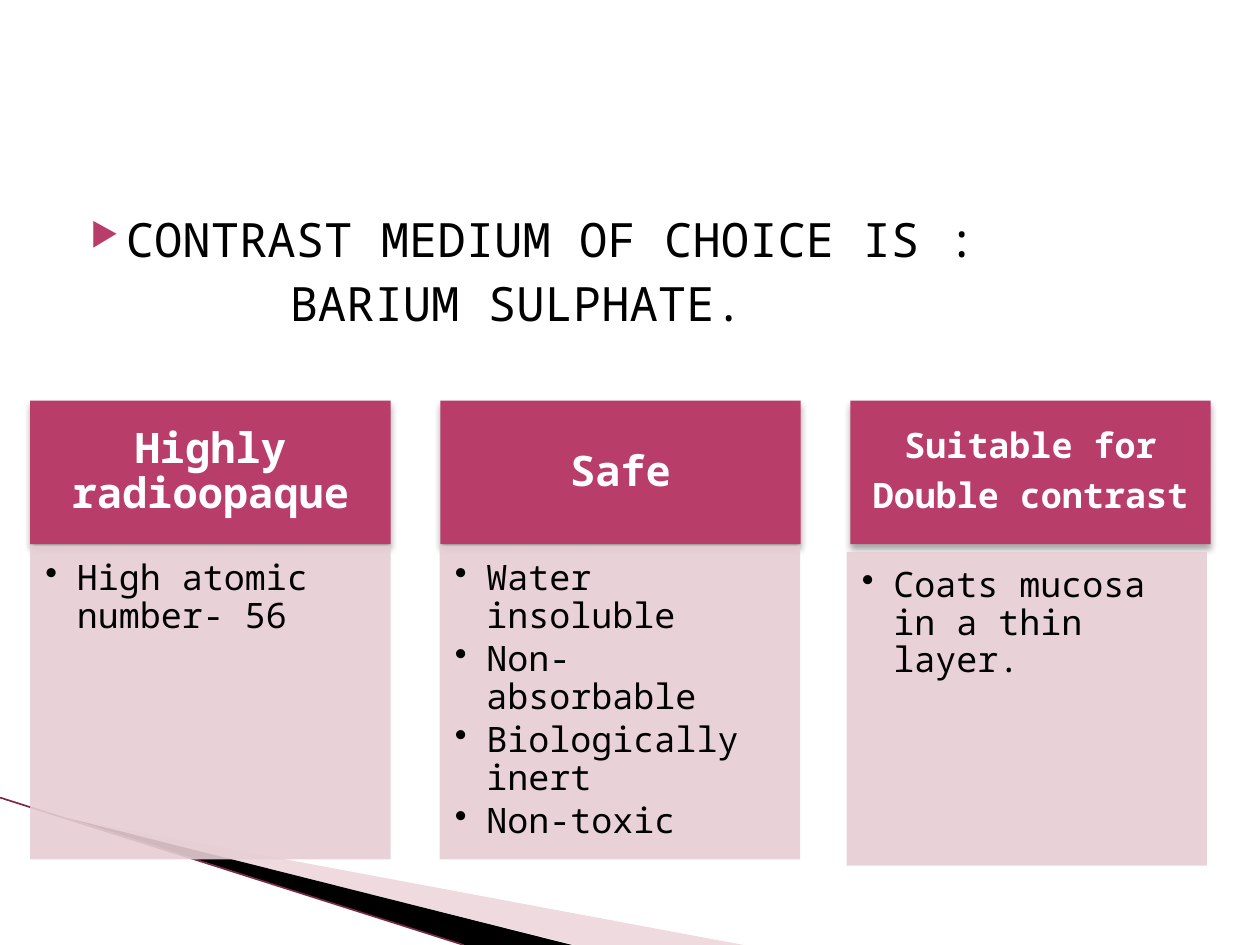
from dataclasses import dataclass

from lxml import etree
from pptx import Presentation
from pptx.dml.color import RGBColor
from pptx.enum.shapes import MSO_CONNECTOR, MSO_SHAPE
from pptx.enum.text import MSO_ANCHOR, PP_ALIGN
from pptx.oxml.ns import qn
from pptx.util import Inches, Pt

RECT = MSO_SHAPE.RECTANGLE
STRAIGHT = MSO_CONNECTOR.STRAIGHT
TOP, MIDDLE = MSO_ANCHOR.TOP, MSO_ANCHOR.MIDDLE
LEFT, CENTER = PP_ALIGN.LEFT, PP_ALIGN.CENTER


@dataclass(frozen=True)
class Theme:
    font: str = "Noto Sans Mono"
    accent: str = "B83D68"
    panel: str = "E6CED4"
    swoosh: str = "D8A3AF"
    edge: str = "7B2945"
    dark: str = "000000"
    light: str = "FFFFFF"
    lead: int = 27
    heading: int = 24
    body: int = 20


THEME = Theme()

COLUMNS = [
    {"heading": ["Highly radioopaque"], "size": THEME.heading, "inset": (0.19, 0.11),
     "points": ["High atomic number- 56"], "panel_at": (0.24, 4.33)},
    {"heading": ["Safe"], "size": THEME.heading, "inset": (0.19, 0.11),
     "points": ["Water insoluble", "Non-absorbable", "Biologically inert", "Non-toxic"],
     "panel_at": (3.49, 4.33)},
    {"heading": ["Suitable for", "Double contrast"], "size": THEME.body, "inset": (0.16, 0.09),
     "points": ["Coats mucosa in a thin layer."], "panel_at": (6.72, 4.38)},
]
HEADING_LEFT, HEADING_TOP, COLUMN_STEP = 0.24, 3.18, 3.255
COLUMN_WIDTH, HEADING_HEIGHT, PANEL_HEIGHT = 2.86, 1.14, 2.49


def sub(parent, tag, **attrs):
    el = etree.SubElement(parent, qn(tag))
    for name, value in attrs.items():
        el.set(name, str(value))
    return el


def set_fill(sp, color, alpha=100):
    sp.shadow.inherit = False
    sp.line.fill.background()
    sp.fill.solid()
    sp.fill.fore_color.rgb = RGBColor.from_string(color)
    if alpha < 100:
        clr = sp._element.spPr.find(qn("a:solidFill"))[0]
        sub(clr, "a:alpha", val=alpha * 1000)


def add_shadow(sp):
    effects = sp._element.spPr.find(qn("a:effectLst"))
    shadow = sub(effects, "a:outerShdw", blurRad=Pt(4), dist=Pt(3), dir=5400000, rotWithShape=0)
    clr = sub(shadow, "a:srgbClr", val=THEME.dark)
    sub(clr, "a:alpha", val=35000)


def set_frame(tf, insets, anchor=TOP):
    left, top, right, bottom = (Inches(v) for v in insets)
    formats = {"word_wrap": True, "vertical_anchor": anchor, "margin_left": left,
               "margin_top": top, "margin_right": right, "margin_bottom": bottom}
    for name, value in formats.items():
        setattr(tf, name, value)


def set_indent(p, margin, indent=0.0):
    pPr = p._p.get_or_add_pPr()
    pPr.set("marL", str(Inches(margin)))
    pPr.set("indent", str(Inches(indent)))
    return pPr


def add_bullet(p, char, margin, color=None, percent=None):
    pPr = set_indent(p, margin, -margin if color is None else -0.28)
    if color:
        sub(sub(pPr, "a:buClr"), "a:srgbClr", val=color)
    if percent:
        sub(pPr, "a:buSzPct", val=percent * 1000)
    sub(pPr, "a:buChar", char=char)


def add_paragraphs(tf, lines, size, color, bold=False, align=LEFT, gap=0, spacing=1.0):
    for i, text in enumerate(lines):
        p = tf.add_paragraph() if i else tf.paragraphs[0]
        p.alignment = align
        p.line_spacing = spacing
        p.space_before = Pt(gap if i else 0)
        r = p.add_run()
        r.text = text
        r.font.color.rgb = RGBColor.from_string(color)
        for name, value in {"name": THEME.font, "size": Pt(size), "bold": bold}.items():
            setattr(r.font, name, value)
    return tf.paragraphs


def add_polygon(s, points, color, alpha=100):
    corners = [(Inches(x), Inches(y)) for x, y in points]
    builder = s.shapes.build_freeform(*corners[0])
    builder.add_line_segments(corners[1:], close=True)
    set_fill(builder.convert_to_shape(), color, alpha)


def add_edge(s, x1, y1, x2, y2):
    line = s.shapes.add_connector(STRAIGHT, Inches(x1), Inches(y1), Inches(x2), Inches(y2))
    line.line.color.rgb = RGBColor.from_string(THEME.edge)
    line.line.width = Pt(0.95)
    sub(line._element.spPr, "a:effectLst")


def add_lead(s):
    sp = s.shapes.add_textbox(Inches(0.5), Inches(1.62), Inches(9), Inches(1.2))
    set_frame(sp.text_frame, (0.1, 0.05, 0.1, 0.05))
    lines = ["CONTRAST MEDIUM OF CHOICE IS :", "BARIUM SULPHATE."]
    first, second = add_paragraphs(sp.text_frame, lines, THEME.lead, THEME.dark, gap=4)
    add_bullet(first, "▶", 0.4, THEME.accent, 68)
    set_indent(second, 1.7)


def add_block(s, left, top, height, color, alpha=100):
    sp = s.shapes.add_shape(RECT, Inches(left), Inches(top), Inches(COLUMN_WIDTH), Inches(height))
    set_fill(sp, color, alpha)
    return sp


def add_column(s, left, column):
    heading = add_block(s, left, HEADING_TOP, HEADING_HEIGHT, THEME.accent)
    add_shadow(heading)
    set_frame(heading.text_frame, column["inset"] * 2, MIDDLE)
    add_paragraphs(heading.text_frame, column["heading"], column["size"], THEME.light,
                   bold=True, align=CENTER, gap=7, spacing=0.9)

    panel = add_block(s, *column["panel_at"], PANEL_HEIGHT, THEME.panel, 90)
    set_frame(panel.text_frame, (0.12, 0.12, 0.16, 0.17))
    for p in add_paragraphs(panel.text_frame, column["points"], THEME.body, THEME.dark,
                            gap=3, spacing=0.9):
        add_bullet(p, "•", 0.25)


def main():
    prs = Presentation()
    prs.slide_width, prs.slide_height = Inches(10), Inches(7.5)
    s = prs.slides.add_slide(prs.slide_layouts[6])
    add_polygon(s, [(0.55, 6.5), (5.9, 7.5), (4.56, 7.5)], THEME.swoosh, 40)
    add_polygon(s, [(0.53, 6.49), (4.54, 7.5), (3.68, 7.5)], THEME.dark)
    add_edge(s, 0, 6.33, 3.68, 7.5)
    add_lead(s)
    for i, column in enumerate(COLUMNS):
        add_column(s, HEADING_LEFT + i * COLUMN_STEP, column)
    prs.save("out.pptx")


if __name__ == "__main__":
    main()
